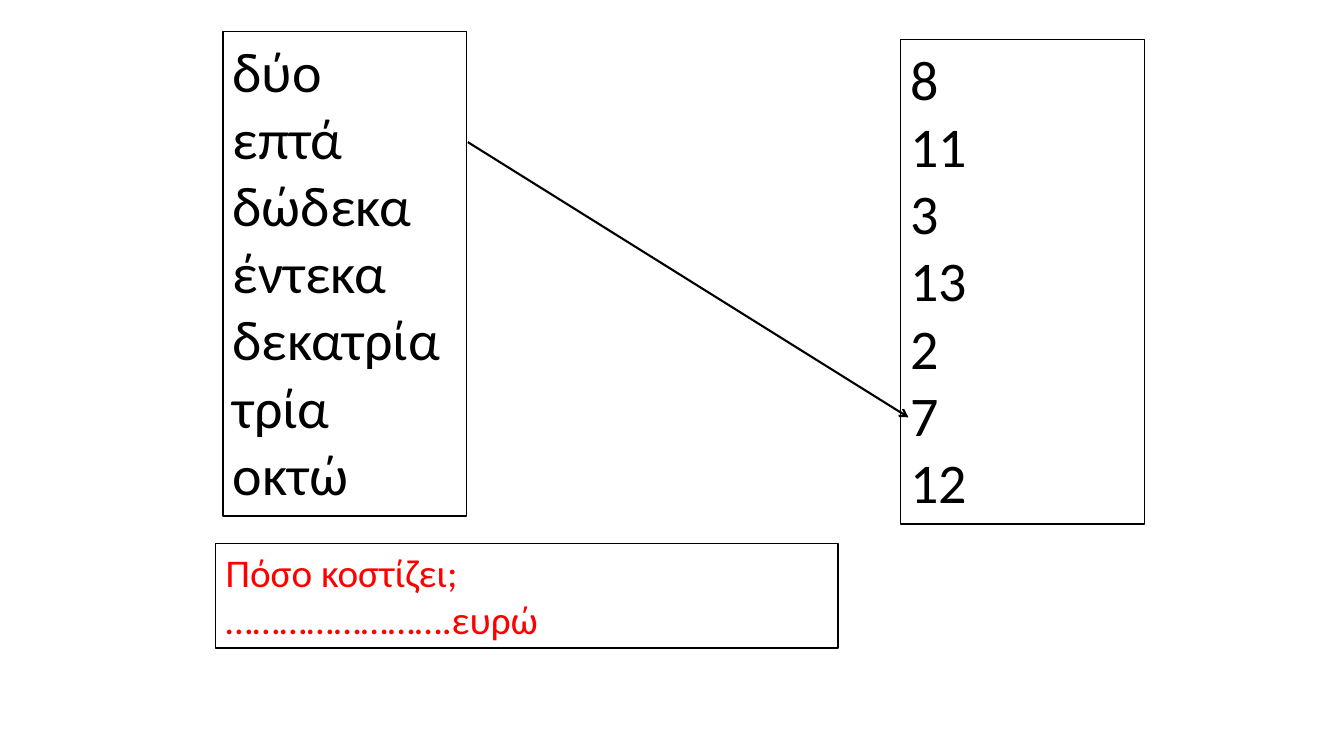
from lxml.etree import SubElement
from pptx import Presentation
from pptx.dml.color import RGBColor as RGB
from pptx.enum.shapes import MSO_CONNECTOR as LINK
from pptx.enum.text import MSO_ANCHOR as ANCHOR
from pptx.enum.text import MSO_AUTO_SIZE as FIT
from pptx.oxml.ns import qn
from pptx.util import Inches, Pt

COLORS = {"ink": "000000", "paper": "FFFFFF", "price": "FF0000"}
FONT = "Calibri"
WORDS = ["δύο", "επτά", "δώδεκα", "έντεκα", "δεκατρία", "τρία", "οκτώ"]
DIGITS = ["8", "11", "3", "13", "2", "7", "12"]
PRICE = ["Πόσο κοστίζει;", "…………………….ευρώ"]


def color(name):
    return RGB.from_string(COLORS[name])


# Bordered box with one paragraph per line
def add_box(slide, box, lines, size, ink="ink"):
    shape = slide.shapes.add_textbox(*map(Inches, box))
    shape.fill.solid()
    shape.fill.fore_color.rgb = color("paper")
    shape.line.color.rgb = color("ink")
    shape.line.width = Pt(1)
    frame = shape.text_frame
    frame.word_wrap = True
    frame.auto_size = FIT.SHAPE_TO_FIT_TEXT
    frame.vertical_anchor = ANCHOR.TOP
    frame.text = "\n".join(lines)
    for para in frame.paragraphs:
        for run in para.runs:
            run.font.name = FONT
            run.font.size = Pt(size)
            run.font.color.rgb = color(ink)


# Arrow from a word to its number
def add_arrow(slide, start, end):
    link = slide.shapes.add_connector(
        LINK.STRAIGHT, *map(Inches, (*start, *end)))
    link.line.color.rgb = color("ink")
    link.line.width = Pt(1.5)
    SubElement(link.line._get_or_add_ln(), qn("a:tailEnd"), type="arrow")
    SubElement(link._element.spPr, qn("a:effectLst"))


# Matching exercise with a price question below
def add_match(slide):
    add_box(slide, (2.21, 0.31, 2.42, 4.81), WORDS, 40)
    add_box(slide, (8.93, 0.39, 2.42, 4.81), DIGITS, 40)
    add_arrow(slide, (4.64, 1.41), (9.01, 4.14))
    add_box(slide, (2.14, 5.39, 6.17, 1.04), PRICE, 28, "price")


def main():
    deck = Presentation()
    deck.slide_width, deck.slide_height = Inches(13.33), Inches(7.5)
    add_match(deck.slides.add_slide(deck.slide_layouts[6]))
    deck.save("out.pptx")


if __name__ == "__main__":
    main()
